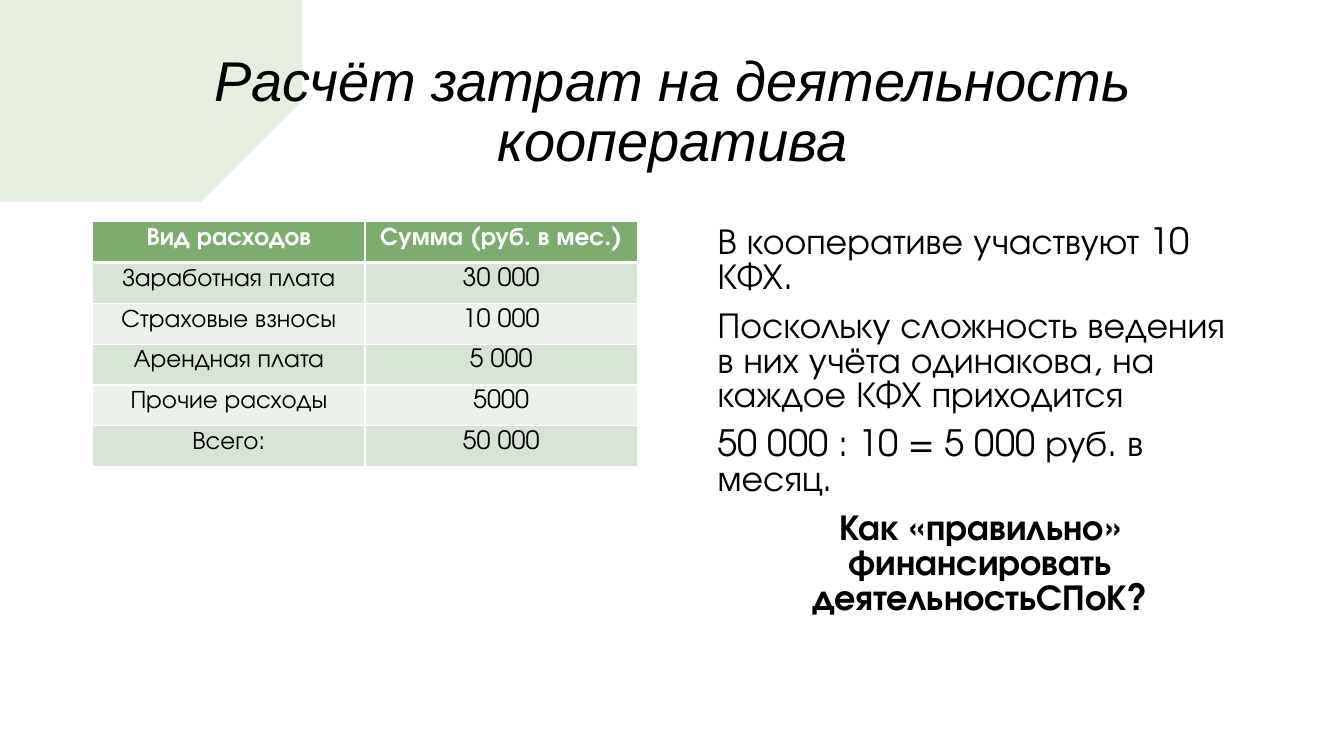
from lxml import etree
from pptx import Presentation
from pptx.dml.color import RGBColor
from pptx.enum import text
from pptx.oxml import ns
from pptx.util import Inches, Pt

COLORS = {"green": "7DAC6C", "band": "D7E3D4", "light": "ECF1EB",
          "white": "FFFFFF", "black": "000000"}
BODY_FONT = "TeX Gyre Adventor"
CENTER = text.PP_ALIGN.CENTER

BRUSH_OUTLINE = [
    (0, 0.34), (0.06, 0.35), (0.25, 0.37), (0.66, 0.38), (1.02, 0.37), (1.51, 0.38),
    (1.94, 0.41), (2.25, 0.42), (2.48, 0.41), (2.66, 0.42), (2.8, 0.47), (2.71, 0.49),
    (2.55, 0.54), (2.53, 0.57), (2.56, 0.59), (2.62, 0.62), (2.48, 0.62), (2.38, 0.66),
    (2.46, 0.68), (2.56, 0.7), (2.66, 0.71), (2.75, 0.74), (2.51, 0.75), (2.63, 0.78),
    (2.73, 0.81), (2.8, 0.82), (2.88, 0.83), (2.9, 0.85), (2.87, 0.88), (2.84, 0.88),
    (2.63, 0.88), (2.95, 0.93), (3.3, 0.94), (3.21, 0.97), (3.18, 1.06), (3.07, 1.11),
    (3, 1.13), (2.83, 1.16), (2.8, 1.2), (2.78, 1.25), (2.74, 1.28), (3.08, 1.28),
    (2.9, 1.33), (2.69, 1.38), (2.73, 1.42), (2.52, 1.48), (2.63, 1.48), (2.4, 1.58),
    (1.97, 1.72), (1.5, 1.81), (1.02, 1.88), (0.65, 1.91), (0.23, 1.9), (0.07, 1.89),
    (0, 1.88),
]
EXPENSES = [
    ("Вид расходов", "Сумма (руб. в мес.)"),
    ("Заработная плата", "30 000"),
    ("Страховые взносы", "10 000"),
    ("Арендная плата", "5 000"),
    ("Прочие расходы", "5000"),
    ("Всего:", "50 000"),
]
EXPLANATION = [
    "В кооперативе участвуют 10 КФХ.",
    "Поскольку сложность ведения в них учёта одинакова, на каждое КФХ приходится",
    "50 000 : 10 = 5 000 руб. в месяц.",
]
QUESTION = "Как «правильно» финансировать деятельностьСПоК?"


def rgb(name):
    return RGBColor.from_string(COLORS[name])


def write(paragraph, content, color="black", layout=None, **font):
    """Put one run in the paragraph, with paragraph and font formats."""
    run = paragraph.add_run()
    run.text = content
    run.font.color.rgb = rgb(color)
    for target, formats in ((run.font, font), (paragraph, layout or {})):
        for name, value in formats.items():
            setattr(target, name, value)


def add_brush_stroke(slide):
    builder = slide.shapes.build_freeform(*BRUSH_OUTLINE[0], scale=Inches(1))
    builder.add_line_segments(BRUSH_OUTLINE[1:], close=True)
    shape = builder.convert_to_shape()
    shape.shadow.inherit = False
    shape.line.fill.background()
    shape.fill.solid()
    shape.fill.fore_color.rgb = rgb("green")
    color = shape.fill._xPr.find(".//" + ns.qn("a:srgbClr"))
    etree.SubElement(color, ns.qn("a:alpha"), val="20000")


def add_text_frame(slide, left, top, width, height, anchor):
    box = slide.shapes.add_textbox(*map(Inches, (left, top, width, height)))
    frame = box.text_frame
    frame.word_wrap = True
    frame.vertical_anchor = anchor
    return frame


def set_borders(cell, widths):
    """Draw white cell borders; widths maps a side (L, R, T, B) to points."""
    properties = cell._tc.get_or_add_tcPr()
    for index, (side, width) in enumerate(widths.items()):
        line = etree.Element(ns.qn(f"a:ln{side}"), w=str(Pt(width)))
        fill = etree.SubElement(line, ns.qn("a:solidFill"))
        etree.SubElement(fill, ns.qn("a:srgbClr"), val=COLORS["white"])
        properties.insert(index, line)


def add_expense_table(slide):
    row_height = 0.405
    table = slide.shapes.add_table(
        len(EXPENSES), 2, Inches(0.92), Inches(2.2),
        Inches(5.4), Inches(row_height * len(EXPENSES))).table
    for row, values in enumerate(EXPENSES):
        header = row == 0
        fill = "green" if header else ("light", "band")[row % 2]
        borders = {"L": 1, "R": 1, "T": 3 if row == 1 else 1, "B": 3 if header else 1}
        for column, value in enumerate(values):
            cell = table.cell(row, column)
            for side in ("left", "right", "top", "bottom"):
                setattr(cell, f"margin_{side}", Inches(0.05))
            cell.fill.solid()
            cell.fill.fore_color.rgb = rgb(fill)
            set_borders(cell, borders)
            write(cell.text_frame.paragraphs[0], value, "white" if header else "black",
                  {"alignment": CENTER}, name=BODY_FONT, size=Pt(18), bold=header)


def add_title(slide):
    frame = add_text_frame(slide, 0.92, 0.4, 11.5, 1.45, text.MSO_ANCHOR.MIDDLE)
    write(frame.paragraphs[0], "Расчёт затрат на деятельность кооператива",
          layout={"alignment": CENTER, "line_spacing": 0.9},
          name="Arial", size=Pt(40), italic=True)


def add_explanation(slide):
    frame = add_text_frame(slide, 7.02, 2.2, 5.4, 4.55, text.MSO_ANCHOR.TOP)
    for index, content in enumerate([*EXPLANATION, QUESTION]):
        paragraph = frame.add_paragraph() if index else frame.paragraphs[0]
        asking = content == QUESTION
        layout = {"line_spacing": 0.8, "space_before": Pt(10),
                  "alignment": CENTER if asking else text.PP_ALIGN.LEFT}
        write(paragraph, content, layout=layout,
              name=BODY_FONT, size=Pt(25.9), bold=asking)


def main():
    presentation = Presentation()
    presentation.slide_width = Inches(13.33)
    presentation.slide_height = Inches(7.5)
    slide = presentation.slides.add_slide(presentation.slide_layouts[6])
    add_brush_stroke(slide)
    add_title(slide)
    add_expense_table(slide)
    add_explanation(slide)
    presentation.save("out.pptx")


if __name__ == "__main__":
    main()
